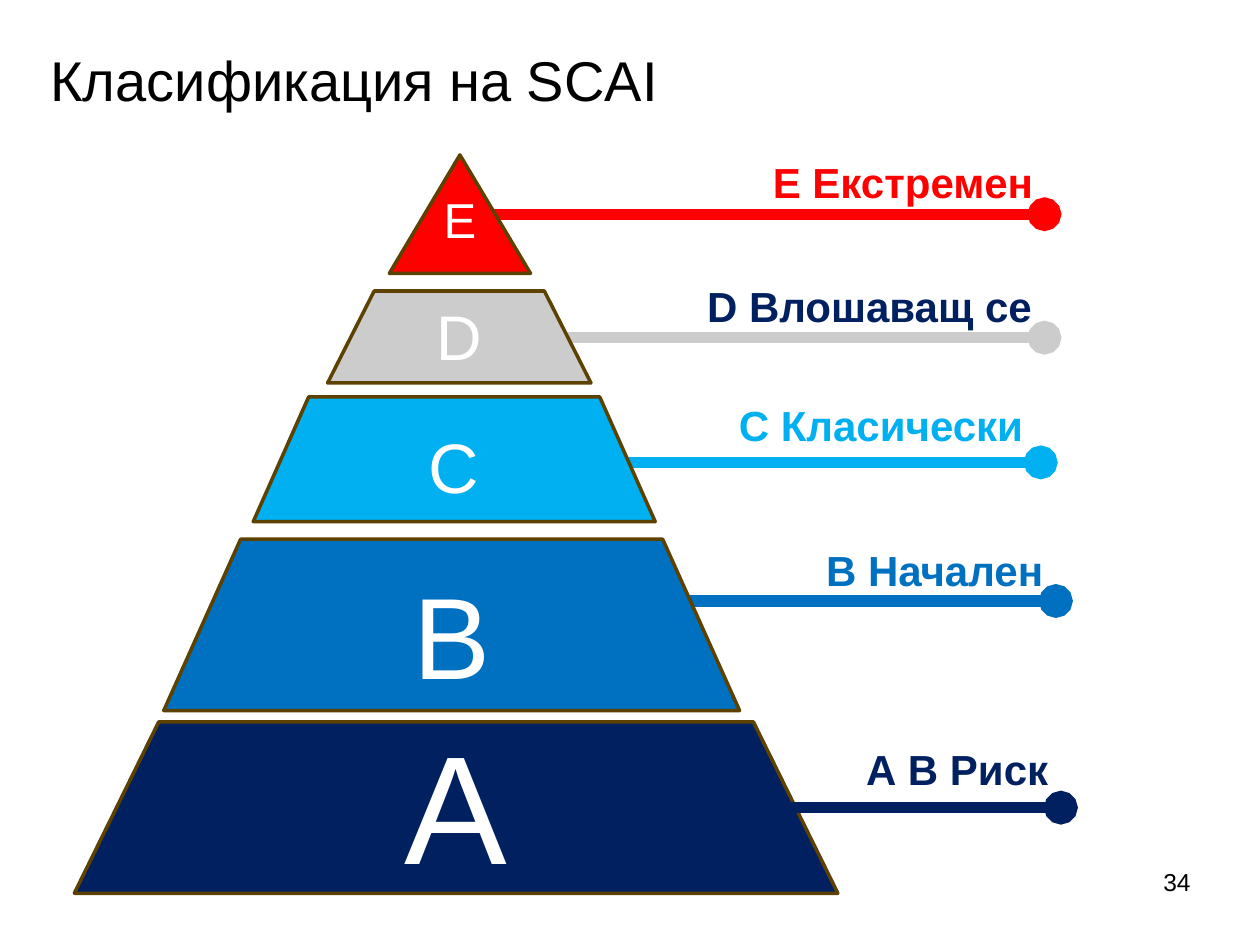
from collections import namedtuple

from lxml import etree
from pptx import Presentation
from pptx.dml.color import RGBColor
from pptx.enum.shapes import MSO_CONNECTOR, MSO_SHAPE
from pptx.enum.text import MSO_ANCHOR, PP_ALIGN
from pptx.oxml.ns import qn
from pptx.util import Inches, Pt

STRAIGHT = MSO_CONNECTOR.STRAIGHT
TRIANGLE = MSO_SHAPE.ISOSCELES_TRIANGLE
MIDDLE, TOP = MSO_ANCHOR.MIDDLE, MSO_ANCHOR.TOP
LEFT, CENTER, RIGHT = PP_ALIGN.LEFT, PP_ALIGN.CENTER, PP_ALIGN.RIGHT

WIDTH, HEIGHT = Inches(10), Inches(7.5)
COLUMN, ROW = WIDTH / 100, HEIGHT / 75
FONT = "Arial"
NAVY, BLUE, SKY, GREY, RED = "002060", "0070C0", "00B0F0", "CCCCCC", "FF0000"
WHITE, BLACK, EDGE = "FFFFFF", "000000", "5D4100"

Tier = namedtuple("Tier", "box inset color letter size drop")
Callout = namedtuple("Callout", "start end row label color width lift gap")

TIERS = [
    (Tier((30.9, 12.3, 11.2, 9.4), None, RED, "E", 28, 0.35),
     Callout(38.2, 82.9, 17, "Е Екстремен", RED, 21.8, 5.1, 0.4)),
    (Tier((26, 23.1, 20.9, 7.3), 3.7, GREY, "D", 36, -0.1),
     Callout(40.6, 82.9, 26.8, "D Влошаващ се", NAVY, 26.9, 5, 0.5)),
    (Tier((20.1, 31.5, 31.9, 9.9), 4.4, SKY, "C", 40, 0.5),
     Callout(39.8, 82.6, 36.7, "С Класически", SKY, 23.7, 5.5, 0.9)),
    (Tier((13, 42.8, 45.7, 13.6), 6.1, BLUE, "B", 66, 0.65),
     Callout(52, 83.8, 47.7, "В Начален", BLUE, 18.4, 5, 0.5)),
    (Tier((5.9, 57.3, 60.6, 13.6), 6.7, NAVY, "A", 88, -0.4),
     Callout(47.6, 84.2, 64.1, "А В Риск", NAVY, 15.6, 5.6, 0.5)),
]


def rgb(color):
    """Turn a hex string into a colour."""
    return RGBColor.from_string(color)


def grid(column, row):
    """Turn a grid position or size into slide units."""
    return int(column * COLUMN), int(row * ROW)


def add_text(slide, box, text, size, color, align=LEFT, anchor=TOP, bold=False, wrap=True):
    """Place one line of text in a grid box."""
    left, top, width, height = box
    shape = slide.shapes.add_textbox(*grid(left, top), *grid(width, height))
    frame = shape.text_frame
    frame.word_wrap = wrap
    frame.vertical_anchor = anchor
    frame.margin_left = frame.margin_right = Inches(0.05)
    frame.margin_top = frame.margin_bottom = Inches(0.05)
    frame.text = text
    paragraph = frame.paragraphs[0]
    paragraph.alignment = align
    font = paragraph.runs[0].font
    font.name, font.size, font.bold = FONT, Pt(size), bold
    font.color.rgb = rgb(color)


def add_tier(slide, tier):
    """Draw one pyramid tier with its letter."""
    left, top, width, height = tier.box
    if tier.inset is None:
        shape = slide.shapes.add_shape(TRIANGLE, *grid(left, top), *grid(width, height))
    else:
        right, bottom = left + width, top + height
        builder = slide.shapes.build_freeform(*grid(left, bottom))
        builder.add_line_segments([
            grid(left + tier.inset, top), grid(right - tier.inset, top), grid(right, bottom),
        ], close=True)
        shape = builder.convert_to_shape()
    shape.shadow.inherit = False
    shape.fill.solid()
    shape.fill.fore_color.rgb = rgb(tier.color)
    shape.line.color.rgb = rgb(EDGE)
    shape.line.width = Pt(2)
    add_text(slide, (left, top + tier.drop, width, height), tier.letter, tier.size, WHITE,
             CENTER, MIDDLE, wrap=False)


def add_leader(slide, callout, color):
    """Draw a thick leader line that ends in a dot."""
    leader = slide.shapes.add_connector(
        STRAIGHT, *grid(callout.end, callout.row), *grid(callout.start, callout.row))
    leader.line.color.rgb = rgb(color)
    leader.line.width = Pt(6.5)
    etree.SubElement(leader.line._get_or_add_ln(), qn("a:headEnd"), type="oval")
    etree.SubElement(leader._element.spPr, qn("a:effectLst"))


def add_label(slide, callout):
    """Write a callout label above its leader line."""
    left = callout.end - callout.gap - callout.width
    add_text(slide, (left, callout.row - callout.lift, callout.width, 4.8), callout.label, 24,
             callout.color, RIGHT, bold=True, wrap=False)


def add_pyramid(slide, tiers):
    """Draw all tiers, with only the base leader in front of its tier."""
    for tier, callout in tiers[:-1]:
        add_leader(slide, callout, tier.color)
    for tier, callout in tiers:
        add_tier(slide, tier)
        add_label(slide, callout)
    base, callout = tiers[-1]
    add_leader(slide, callout, base.color)


def main():
    """Build and save the slide."""
    presentation = Presentation()
    presentation.slide_width, presentation.slide_height = WIDTH, HEIGHT
    slide = presentation.slides.add_slide(presentation.slide_layouts[6])
    add_text(slide, (3.5, 0, 90, 12.5), "Класификация на SCAI", 32, BLACK, anchor=MIDDLE)
    add_pyramid(slide, TIERS)
    add_text(slide, (91.7, 68.3, 3.3, 3.2), "34", 14, BLACK, RIGHT, wrap=False)
    presentation.save("out.pptx")


if __name__ == "__main__":
    main()
